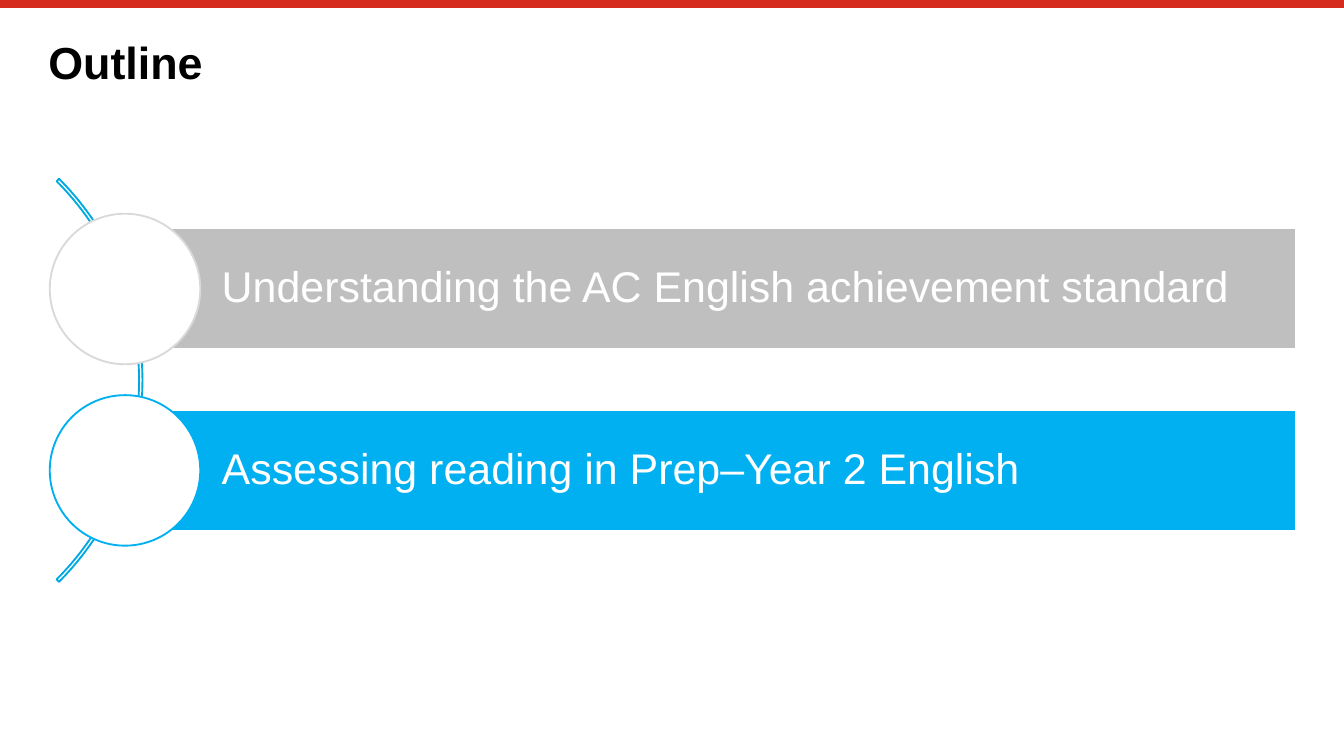
from dataclasses import dataclass

import pptx
import pptx.dml.color
import pptx.enum.shapes
import pptx.enum.text
import pptx.util
from lxml import etree
from pptx.oxml.ns import qn

Inches = pptx.util.Inches
Pt = pptx.util.Pt
SHAPE = pptx.enum.shapes.MSO_SHAPE
ANCHOR = pptx.enum.text.MSO_ANCHOR


@dataclass(frozen=True)
class Theme:
    font: str = "Arial"
    title_size: float = 24
    topic_size: float = 23
    black: str = "000000"
    white: str = "FFFFFF"
    red: str = "D52B1E"
    arc: str = "00A9E0"
    done: str = "BFBFBF"
    done_ring: str = "D9D9D9"
    current: str = "00B0F0"


THEME = Theme()
TOPICS = [
    ("Understanding the AC English achievement standard", THEME.done, THEME.done_ring),
    ("Assessing reading in Prep–Year 2 English", THEME.current, THEME.current),
]
SLIDE_WIDTH = Inches(10)
BAR_LEFT, BAR_TOP, BAR_WIDTH, BAR_HEIGHT = 0.94, 1.7, 8.7, 0.9
BAR_PITCH = 1.35
RING_LEFT, RING_SIZE = 0.37, 1.12


def rgb(value):
    return pptx.dml.color.RGBColor.from_string(value)


def set_line(outline, color, width):
    outline.color.rgb = rgb(color)
    outline.width = Pt(width)


def write(frame, text, size, color, insets, anchor, bold=False):
    frame.word_wrap = True
    frame.vertical_anchor = anchor
    frame.margin_left, frame.margin_top, frame.margin_right, frame.margin_bottom = map(Inches, insets)
    frame.text = text
    paragraph = frame.paragraphs[0]
    paragraph.alignment = pptx.enum.text.PP_ALIGN.LEFT
    paragraph.line_spacing = 0.9
    font = paragraph.runs[0].font
    font.name = THEME.font
    font.size = Pt(size)
    font.bold = bold
    font.color.rgb = rgb(color)


def add_outlined(shapes, kind, box, line, fill=None):
    shape = shapes.add_shape(kind, *map(Inches, box))
    shape.shadow.inherit = False
    set_line(shape.line, line, 1)
    if fill:
        shape.fill.solid()
        shape.fill.fore_color.rgb = rgb(fill)
    else:
        shape.fill.background()
    return shape


def add_top_rule(slide):
    rule = slide.shapes.add_connector(
        pptx.enum.shapes.MSO_CONNECTOR.STRAIGHT, 0, Inches(0.03), SLIDE_WIDTH, Inches(0.03)
    )
    set_line(rule.line, THEME.red, 4.2)
    etree.SubElement(rule._element.spPr, qn("a:effectLst"))


def add_title(slide, text):
    title = slide.shapes.add_textbox(*map(Inches, (0.36, 0.3, 9.29, 0.39)))
    write(title.text_frame, text, THEME.title_size, THEME.black, (0, 0, 0, 0), ANCHOR.TOP, bold=True)


def add_arc(shapes):
    arc = add_outlined(shapes, SHAPE.BLOCK_ARC, (-3.18, 0.71, 4.24, 4.24), THEME.arc)
    for index, value in enumerate((189, 27, 0.006)):
        arc.adjustments[index] = value


def add_topic(shapes, top, text, fill, ring_color):
    bar = add_outlined(shapes, SHAPE.RECTANGLE, (BAR_LEFT, top, BAR_WIDTH, BAR_HEIGHT), THEME.white, fill)
    write(bar.text_frame, text, THEME.topic_size, THEME.white, (0.71, 0.06, 0.06, 0.06), ANCHOR.MIDDLE)
    ring_top = top + (BAR_HEIGHT - RING_SIZE) / 2
    add_outlined(shapes, SHAPE.OVAL, (RING_LEFT, ring_top, RING_SIZE, RING_SIZE), ring_color, THEME.white)


def main():
    deck = pptx.Presentation()
    deck.slide_width, deck.slide_height = SLIDE_WIDTH, SLIDE_WIDTH * 9 // 16
    slide = deck.slides.add_slide(deck.slide_layouts[6])
    add_top_rule(slide)
    add_title(slide, "Outline")
    outline = slide.shapes.add_group_shape().shapes
    add_arc(outline)
    for index, (text, fill, ring_color) in enumerate(TOPICS):
        add_topic(outline, BAR_TOP + index * BAR_PITCH, text, fill, ring_color)
    deck.save("out.pptx")


if __name__ == "__main__":
    main()
